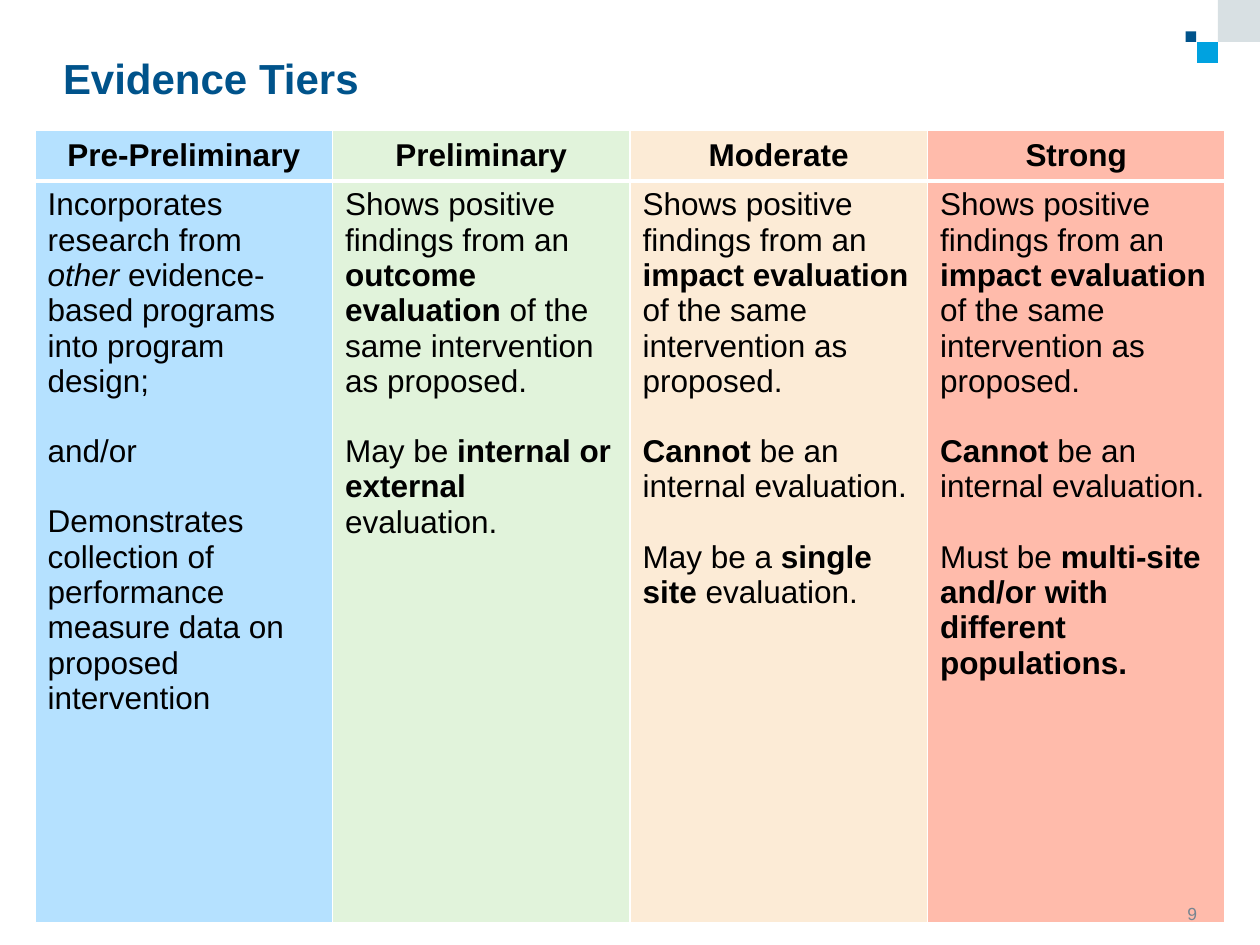
from typing import NamedTuple

from lxml.etree import SubElement
from pptx import Presentation
from pptx.dml.color import RGBColor
from pptx.enum.shapes import MSO_SHAPE as Shape
from pptx.enum.text import MSO_ANCHOR as Anchor, PP_ALIGN as Align
from pptx.oxml.ns import qn
from pptx.util import Pt

FONT = "Arial"
NAVY, BLACK, WHITE = "00538B", "000000", "FFFFFF"
PARAGRAPH_GAP = 20


class Run(NamedTuple):
    text: str
    bold: bool = False
    italic: bool = False


class Tier(NamedTuple):
    name: str
    fill: str
    paragraphs: list[list[Run]]


class Square(NamedTuple):
    left: float
    top: float
    size: float
    fill: str


def findings(evaluation: str) -> list[Run]:
    return [Run("Shows positive findings from an "), Run(evaluation + " ", bold=True),
            Run("of the same intervention as proposed.")]


NOT_INTERNAL = [Run("Cannot", bold=True), Run(" be an internal evaluation.")]

TIERS = [
    Tier("Pre-Preliminary", "B5E1FF", [
        [Run("Incorporates research from "), Run("other", italic=True),
         Run(" evidence-based programs into program design;")],
        [Run("and/or")],
        [Run("Demonstrates collection of performance measure data on proposed intervention")],
    ]),
    Tier("Preliminary", "E1F3DB", [
        findings("outcome evaluation"),
        [Run("May be "), Run("internal or external ", bold=True), Run("evaluation.")],
    ]),
    Tier("Moderate", "FCEBD6", [
        findings("impact evaluation"),
        NOT_INTERNAL,
        [Run("May be a "), Run("single site", bold=True), Run(" evaluation.")],
    ]),
    Tier("Strong", "FFBBAB", [
        findings("impact evaluation"),
        NOT_INTERNAL,
        [Run("Must be "), Run("multi-site and/or with different populations.", bold=True)],
    ]),
]

SQUARES = [
    Square(677.5, 18, 6, NAVY),
    Square(684, 24, 12, "00A2E0"),
    Square(696, 0, 24, "D8E0E3"),
]


def rgb(color: str) -> RGBColor:
    return RGBColor.from_string(color)


def write(tf, paragraphs: list[list[Run]], *, size: float = 18, color: str = BLACK,
          align=Align.LEFT, anchor=Anchor.TOP, line_spacing: float = 1.0) -> None:
    tf.word_wrap = True
    tf.vertical_anchor = anchor
    for i, runs in enumerate(paragraphs):
        p = tf.add_paragraph() if i else tf.paragraphs[0]
        p.alignment = align
        p.line_spacing = line_spacing
        p.space_before = Pt(PARAGRAPH_GAP if i else 0)
        for run in runs:
            r = p.add_run()
            r.text = run.text
            r.font.name, r.font.size = FONT, Pt(size)
            r.font.bold, r.font.italic = run.bold, run.italic
            r.font.color.rgb = rgb(color)


def clear_margins(tf) -> None:
    tf.margin_left = tf.margin_top = tf.margin_right = tf.margin_bottom = 0


def place(sp, left: float, top: float, width: float, height: float) -> None:
    sp.left, sp.top, sp.width, sp.height = map(Pt, (left, top, width, height))


def add_square(s, square: Square) -> None:
    sp = s.shapes.add_shape(Shape.RECTANGLE, Pt(square.left), Pt(square.top),
                            Pt(square.size), Pt(square.size))
    sp.shadow.inherit = False
    sp.fill.solid()
    sp.fill.fore_color.rgb = rgb(square.fill)
    sp.line.fill.background()


def style_cell(cell, fill: str, top: float = 1, bottom: float = 1) -> None:
    # Borders must come before the fill in the cell properties
    props = cell._tc.get_or_add_tcPr()
    for side, width in {"L": 1, "R": 1, "T": top, "B": bottom}.items():
        line = SubElement(props, qn(f"a:ln{side}"), w=str(Pt(width)))
        SubElement(SubElement(line, qn("a:solidFill")), qn("a:srgbClr"), val=WHITE)
    cell.fill.solid()
    cell.fill.fore_color.rgb = rgb(fill)


def add_tier_table(s, tiers: list[Tier]) -> None:
    table = s.shapes.add_table(2, len(tiers), Pt(20), Pt(74.5), Pt(680), Pt(453)).table
    table.first_row = table.horz_banding = False
    table.rows[0].height, table.rows[1].height = Pt(29), Pt(424)
    for col, tier in enumerate(tiers):
        table.columns[col].width = Pt(170)
        head, body = table.cell(0, col), table.cell(1, col)
        style_cell(head, tier.fill, bottom=3)
        style_cell(body, tier.fill, top=3)
        write(head.text_frame, [[Run(tier.name, bold=True)]], align=Align.CENTER)
        head.vertical_anchor = Anchor.MIDDLE
        write(body.text_frame, tier.paragraphs)


def main() -> None:
    prs = Presentation()
    prs.slide_width, prs.slide_height = Pt(720), Pt(540)
    s = prs.slides.add_slide(prs.slide_layouts[5])

    # Corner decoration
    for square in SQUARES:
        add_square(s, square)

    # Title
    title = s.shapes.title
    place(title, 36, 33, 648, 56)
    clear_margins(title.text_frame)
    write(title.text_frame, [[Run("Evidence Tiers", bold=True)]],
          size=24, color=NAVY, line_spacing=0.9)

    # Tiers
    add_tier_table(s, TIERS)

    # Slide number
    number = s.shapes.add_textbox(Pt(656), Pt(499), Pt(28), Pt(29))
    clear_margins(number.text_frame)
    write(number.text_frame, [[Run("9")]], size=10, color="768591",
          align=Align.RIGHT, anchor=Anchor.BOTTOM)

    prs.save("out.pptx")


if __name__ == "__main__":
    main()
